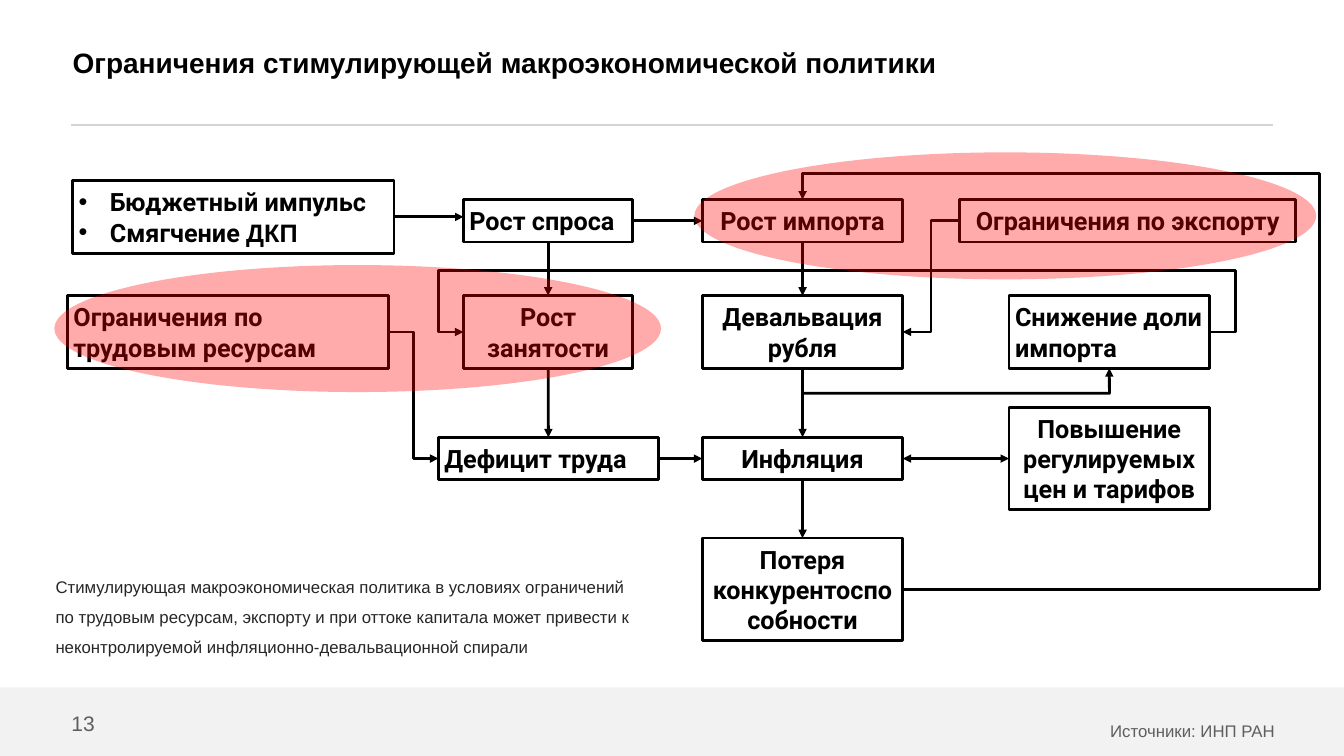
"""Builds a flowchart slide on the limits of stimulative macroeconomic policy."""
from pptx import Presentation
from pptx import util as u
from pptx.dml.color import RGBColor
from pptx.enum import shapes, text
from pptx.oxml.ns import qn
from lxml import etree

TITLE = "Ограничения стимулирующей макроэкономической политики"
NOTE = ("Стимулирующая макроэкономическая политика в условиях ограничений "
        "по трудовым ресурсам, экспорту и при оттоке капитала может привести к "
        "неконтролируемой инфляционно-девальвационной спирали")
SOURCE = "Источники: ИНП РАН"
PAGE = "13"
W, H = 33.87, 19.05
TOP, RIGHT_W = 5.03, 5.05
LEFT, CENTER, RIGHT = text.PP_ALIGN.LEFT, text.PP_ALIGN.CENTER, text.PP_ALIGN.RIGHT
MIDDLE = text.MSO_ANCHOR.MIDDLE

# name: (left, top, width, text lines, alignment, paragraphs)
BOXES = {
    "impulse": (1.83, 4.55, 8.1, 2, LEFT, ["Бюджетный импульс", ["Смягчение ", "ДКП"]]),
    "demand": (11.68, TOP, 4.27, 1, LEFT, ["Рост спроса"]),
    "imports": (17.7, TOP, RIGHT_W, 1, CENTER, ["Рост импорта"]),
    "exports": (24.18, TOP, 8.48, 1, CENTER, ["Ограничения по экспорту"]),
    "labour": (1.7, 7.45, 8.1, 2, LEFT, ["Ограничения по трудовым ресурсам"]),
    "jobs": (11.68, 7.45, 4.27, 2, CENTER, ["Рост занятости"]),
    "rouble": (17.7, 7.45, RIGHT_W, 2, CENTER, ["Девальвация рубля"]),
    "share": (25.43, 7.45, RIGHT_W, 2, LEFT, ["Снижение доли импорта"]),
    "deficit": (11.05, 11.02, 5.54, 1, LEFT, ["Дефицит труда"]),
    "inflation": (17.7, 11.02, RIGHT_W, 1, CENTER, ["Инфляция"]),
    "tariffs": (25.43, 10.26, RIGHT_W, 3, CENTER, ["Повышение регулируемых цен и тарифов"]),
    "loss": (17.7, 13.56, RIGHT_W, 3, CENTER, ["Потеря конкурентоспособности"]),
}
T, L, B, R = range(4)
STRAIGHT, ELBOW = shapes.MSO_CONNECTOR.STRAIGHT, shapes.MSO_CONNECTOR.ELBOW
ARROWS = [
    ("demand", R, "imports", L, STRAIGHT),
    ("demand", B, "jobs", T, STRAIGHT),
    ("imports", B, "rouble", T, STRAIGHT),
    ("rouble", B, "inflation", T, STRAIGHT),
    ("jobs", B, "deficit", T, STRAIGHT),
    ("deficit", R, "inflation", L, STRAIGHT),
    ("inflation", B, "loss", T, STRAIGHT),
    ("inflation", R, "tariffs", L, STRAIGHT),
    ("exports", L, "rouble", R, ELBOW),
    ("labour", R, "deficit", L, ELBOW),
]
# start, bends (None keeps the coordinate of the nearer end), end
LOOPS = [
    ("rouble", B, [(None, 9.91), (27.96, 9.91)], "share", B),
    ("share", R, [(31.14, None), (31.14, 6.81), (11.05, 6.81), (11.05, None)], "jobs", L),
    ("loss", R, [(33.25, None), (33.25, 4.37), (None, 4.37)], "imports", T),
]
ELLIPSES = [(17.5, 3.84, 15.67, 3.2), (1.37, 6.68, 15.29, 3.2)]


def rgb(value):
    return RGBColor.from_string(value)


def write(tf, paragraphs, size=18, font="Roboto", color="000000", bold=False,
          align=LEFT, anchor=text.MSO_ANCHOR.TOP, inset=0, spacing=None,
          bullet=False, wrap=True):
    tf.word_wrap, tf.vertical_anchor = wrap, anchor
    tf.margin_left = tf.margin_right = tf.margin_top = tf.margin_bottom = u.Cm(inset)
    for i, runs in enumerate(paragraphs):
        p = tf.add_paragraph() if i else tf.paragraphs[0]
        p.alignment = align
        if spacing:
            p.line_spacing = spacing
        if bullet:
            pPr = p._p.get_or_add_pPr()
            pPr.set("marL", str(u.Cm(0.79)))
            pPr.set("indent", str(-u.Cm(0.79)))
            etree.SubElement(pPr, qn("a:buFont"), typeface="Arial")
            etree.SubElement(pPr, qn("a:buChar"), char="•")
        for j, words in enumerate([runs] if isinstance(runs, str) else runs):
            r = p.add_run()
            r.text = words
            r.font.size, r.font.bold = u.Pt(size), bold
            r.font.name = "Arial" if j else font
            r.font.color.rgb = rgb(color)


def add_label(s, left, top, width, height, words, **fmt):
    sp = s.shapes.add_textbox(u.Cm(left), u.Cm(top), u.Cm(width), u.Cm(height))
    write(sp.text_frame, [words], font="Arial", **fmt)


def add_filled(s, kind, area, color):
    sp = s.shapes.add_shape(kind, *map(u.Cm, area))
    sp.shadow.inherit = False
    sp.fill.solid()
    sp.fill.fore_color.rgb = rgb(color)
    sp.line.fill.background()
    return sp


def set_line(sp, color="000000", width=2, ends=()):
    sp.line.color.rgb, sp.line.width = rgb(color), u.Pt(width)
    for end in ends:
        etree.SubElement(sp.line._get_or_add_ln(), qn("a:" + end), type="triangle")


def add_line(s, start, end, kind=STRAIGHT, **fmt):
    c = s.shapes.add_connector(kind, *map(u.Cm, start + end))
    set_line(c, **fmt)
    etree.SubElement(c._element.spPr, qn("a:effectLst"))
    return c


def box_height(lines):
    return 0.31 + 0.76 * lines


def side(name, site):
    x, y, w, lines = BOXES[name][:4]
    h = box_height(lines)
    return [(x + w / 2, y), (x, y + h / 2), (x + w / 2, y + h), (x + w, y + h / 2)][site]


def add_loop(s, first, first_site, bends, last, last_site):
    start, end = side(first, first_site), side(last, last_site)
    points = [start]
    for i, bend in enumerate(bends):
        near = start if i == 0 else end
        points.append(tuple(n if b is None else b for b, n in zip(bend, near)))
    points = [(u.Cm(x), u.Cm(y)) for x, y in points + [end]]
    fb = s.shapes.build_freeform(*points[0])
    fb.add_line_segments(points[1:], close=False)
    sp = fb.convert_to_shape()
    sp.shadow.inherit = False
    sp.fill.background()
    set_line(sp, ends=["tailEnd"])


def main():
    prs = Presentation()
    prs.slide_width, prs.slide_height = u.Cm(W), u.Cm(H)
    s = prs.slides.add_slide(prs.slide_layouts[6])
    rect = shapes.MSO_SHAPE.RECTANGLE

    add_line(s, (1.8, 3.15), (32.08, 3.15), color="D5D5D5", width=1.5)
    add_filled(s, rect, (0, 17.32, W, H - 17.32), "F2F2F2")
    add_label(s, 5.46, 17.91, 26.67, 0.69, SOURCE, size=12, color="5E5E5E",
              align=RIGHT, spacing=1.5)
    add_label(s, 1.8, 17.91, 0.66, 0.64, PAGE, size=15, color="5E5E5E",
              anchor=MIDDLE, wrap=False)
    add_label(s, 1.83, 0, 25.58, 3.15, TITLE, size=20, bold=True, anchor=MIDDLE)

    boxes = {}
    for name, (x, y, w, lines, align, words) in BOXES.items():
        sp = add_filled(s, rect, (x, y, w, box_height(lines)), "FFFFFF")
        set_line(sp)
        write(sp.text_frame, words, bold=True, align=align, anchor=MIDDLE,
              inset=0.15, bullet=name == "impulse")
        boxes[name] = sp

    x, y = side("impulse", R)
    c = add_line(s, (x, y), (BOXES["demand"][0], y), ends=["tailEnd"])
    c.begin_connect(boxes["impulse"], R)
    for first, first_site, last, last_site, kind in ARROWS:
        ends = ["headEnd", "tailEnd"] if last == "tariffs" else ["tailEnd"]
        c = add_line(s, side(first, first_site), side(last, last_site), kind, ends=ends)
        c.begin_connect(boxes[first], first_site)
        c.end_connect(boxes[last], last_site)
    for loop in LOOPS:
        add_loop(s, *loop)

    for area in ELLIPSES:
        sp = add_filled(s, shapes.MSO_SHAPE.OVAL, area, "FF0000")
        color = sp._element.spPr.find(qn("a:solidFill"))[0]
        etree.SubElement(color, qn("a:alpha"), val="33000")
    add_label(s, 1.4, 14.27, 14.55, 2.57, NOTE, size=12, color="262626", spacing=1.5)
    prs.save("out.pptx")


if __name__ == "__main__":
    main()
